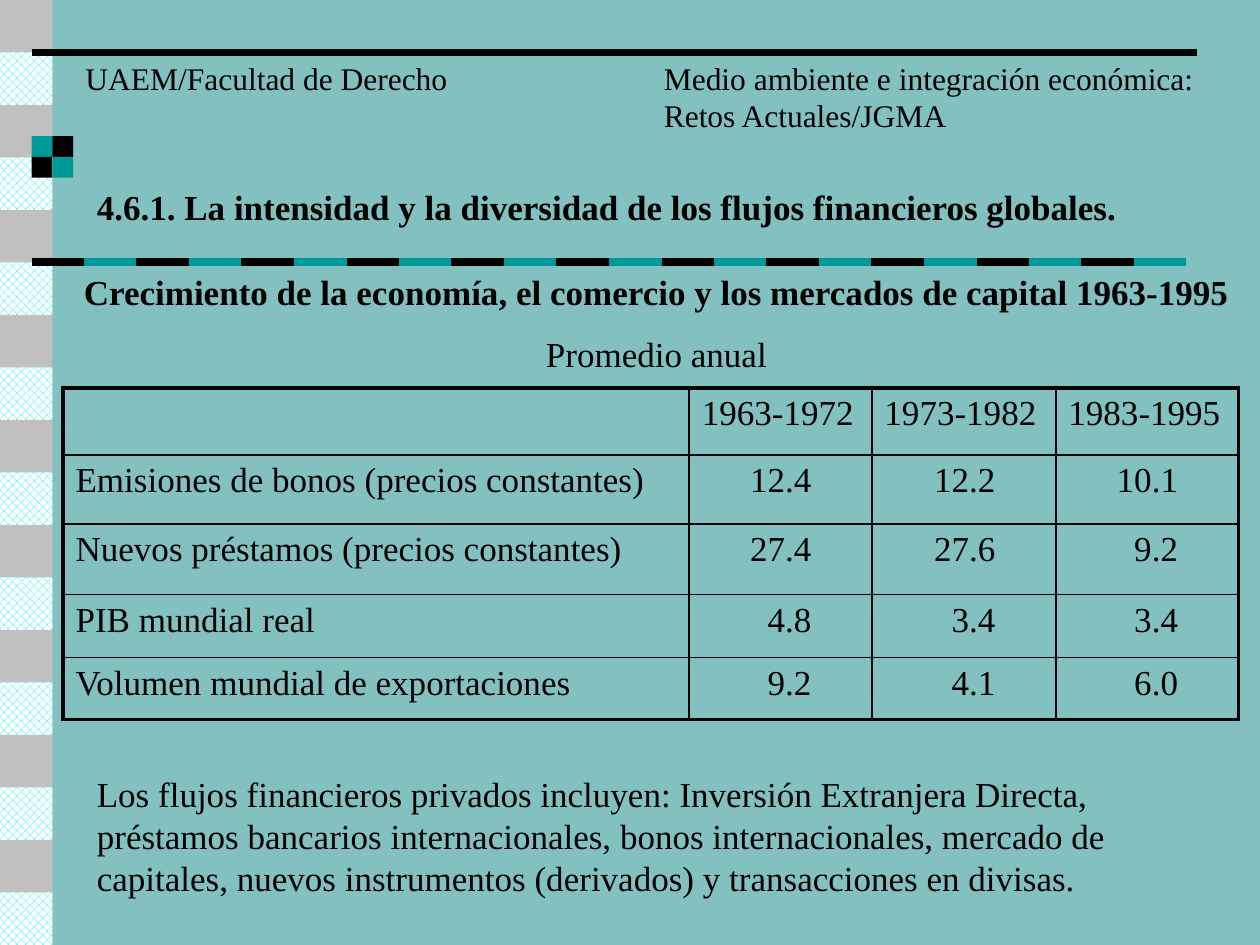
from dataclasses import dataclass

from lxml.etree import SubElement
from pptx import Presentation
from pptx.dml.color import RGBColor
from pptx.enum.dml import MSO_PATTERN
from pptx.enum.shapes import MSO_CONNECTOR, MSO_SHAPE
from pptx.enum.text import PP_ALIGN
from pptx.oxml.ns import qn
from pptx.util import Inches, Pt


@dataclass(frozen=True)
class Theme:
    """Colours, font and sizes shared by the whole slide."""
    back: RGBColor = RGBColor.from_string("83C1C0")
    ink: RGBColor = RGBColor.from_string("000000")
    teal: RGBColor = RGBColor.from_string("009999")
    grey: RGBColor = RGBColor.from_string("C0C0C0")
    aqua: RGBColor = RGBColor.from_string("00EEE8")
    white: RGBColor = RGBColor.from_string("FFFFFF")
    font: str = "Times New Roman"
    body: int = 20
    small: int = 18
    rule: float = 4.5
    outer: float = 2.25
    inner: float = 1


THEME = Theme()
UNIT = 5 / 12

ROWS = [
    ["", "1963-1972", "1973-1982", "1983-1995"],
    ["Emisiones de bonos (precios constantes)", "12.4", "12.2", "10.1"],
    ["Nuevos préstamos (precios constantes)", "27.4", "27.6", "9.2"],
    ["PIB mundial real", "4.8", "3.4", "3.4"],
    ["Volumen mundial de exportaciones", "9.2", "4.1", "6.0"],
]
COLUMN_WIDTHS = [4.97, 1.45, 1.46, 1.45]
ROW_HEIGHTS = [0.53, 0.55, 0.56, 0.5, 0.49]


def style_para(para, text, size=THEME.body, bold=False, align=PP_ALIGN.LEFT):
    """Write text in a paragraph and set its font and alignment."""
    para.text = text
    para.alignment = align
    font = para.font
    font.name, font.size, font.bold = THEME.font, Pt(size), bold
    font.color.rgb = THEME.ink


def add_text(page, box, lines, wrap=True, gap=0, **style):
    """Add a text box holding (text, bold) lines, gap points apart."""
    frame = page.shapes.add_textbox(*map(Inches, box)).text_frame
    frame.word_wrap = wrap
    for index, (text, bold) in enumerate(lines):
        para = frame.add_paragraph() if index else frame.paragraphs[0]
        style_para(para, text, bold=bold, **style)
        if index:
            para.space_before = Pt(gap)


def add_square(page, left, top, side):
    """Add a plain square without outline and return its fill."""
    square = page.shapes.add_shape(
        MSO_SHAPE.RECTANGLE, *map(Inches, (left, top, side, side)))
    square.shadow.inherit = False
    square.line.fill.background()
    return square.fill


def add_rule(page, left, right, top, color):
    """Add one thick horizontal line."""
    rule = page.shapes.add_connector(
        MSO_CONNECTOR.STRAIGHT, *map(Inches, (left, top, right, top)))
    rule.line.color.rgb = color
    rule.line.width = Pt(THEME.rule)
    SubElement(rule._element.spPr, qn("a:effectLst"))


def add_side_band(page, left, top, height):
    """Fill a column with alternating grey and patterned squares."""
    for index in range(round(height / UNIT)):
        fill = add_square(page, left, top + index * UNIT, UNIT)
        if index % 2:
            fill.patterned()
            fill.pattern = MSO_PATTERN.PERCENT_50
            fill.fore_color.rgb = THEME.aqua
            fill.back_color.rgb = THEME.white
        else:
            fill.solid()
            fill.fore_color.rgb = THEME.grey


def add_checker(page, left, top, size):
    """Draw the two by two checker ornament."""
    side = size / 2
    for index in range(4):
        row, column = divmod(index, 2)
        fill = add_square(page, left + column * side, top + row * side, side)
        fill.solid()
        fill.fore_color.rgb = THEME.ink if row != column else THEME.teal


def add_dashed_rule(page, left, top, width):
    """Draw a rule of alternating black and teal pieces."""
    for index in range(round(width / UNIT)):
        start = left + index * UNIT
        color = THEME.teal if index % 2 else THEME.ink
        add_rule(page, start, start + UNIT, top, color)


def add_header(page, left, top, width):
    """Place the course line beneath the top rule."""
    add_rule(page, left, left + width, top, THEME.ink)
    add_text(page, (left + 0.33, top, 3.11, 0.4),
             [("UAEM/Facultad de Derecho", False)], wrap=False, size=THEME.small)
    add_text(page, (left + 4.92, top, 4.51, 0.71),
             [("Medio ambiente e integración económica:", False),
              ("Retos Actuales/JGMA", False)], wrap=False, size=THEME.small)


def set_borders(cell, widths):
    """Draw the left, right, top and bottom borders of a cell."""
    props = cell._tc.get_or_add_tcPr()
    for side, width in zip("LRTB", widths):
        line = SubElement(props, qn(f"a:ln{side}"), w=str(Pt(width)))
        fill = SubElement(line, qn("a:solidFill"))
        SubElement(fill, qn("a:srgbClr"), val=str(THEME.ink))


def add_growth_table(page, box):
    """Build the table of growth rates by period."""
    last_row, last_column = len(ROWS) - 1, len(COLUMN_WIDTHS) - 1
    table = page.shapes.add_table(
        len(ROWS), len(COLUMN_WIDTHS), *map(Inches, box)).table
    table.first_row = table.horz_banding = False
    for column, width in zip(table.columns, COLUMN_WIDTHS):
        column.width = Inches(width)
    for row, height in zip(table.rows, ROW_HEIGHTS):
        row.height = Inches(height)
    for r, values in enumerate(ROWS):
        for c, value in enumerate(values):
            cell = table.cell(r, c)
            on_edge = (c == 0, c == last_column, r == 0, r == last_row)
            set_borders(cell, [THEME.outer if edge else THEME.inner
                               for edge in on_edge])
            cell.fill.background()
            is_number = r > 0 and c > 0
            if is_number:
                cell.margin_right = Inches(0.48)
            style_para(cell.text_frame.paragraphs[0], value,
                       align=PP_ALIGN.RIGHT if is_number else PP_ALIGN.LEFT)


def main():
    """Build and save the slide."""
    deck = Presentation()
    deck.slide_width, deck.slide_height = Inches(10), Inches(7.5)
    page = deck.slides.add_slide(deck.slide_layouts[6])
    page.background.fill.solid()
    page.background.fill.fore_color.rgb = THEME.back

    add_side_band(page, 0, 0, 7.5)
    add_header(page, 0.25, UNIT, 9.25)
    add_checker(page, 0.25, 1.08, 0.33)
    add_dashed_rule(page, 0.25, 2.08, 22 * UNIT)
    add_text(page, (0.67, 1.42, 8.67, 0.43), [
        ("4.6.1. La intensidad y la diversidad de los flujos financieros "
         "globales.", True)])
    add_text(page, (0.42, 2.1, 9.58, 0.94), [
        ("Crecimiento de la economía, el comercio y los mercados de capital "
         "1963-1995", True),
        ("Promedio anual", False)], gap=11, align=PP_ALIGN.CENTER)
    add_growth_table(page, (0.5, 3.08, 9.33, 2.63))
    add_text(page, (0.67, 6.08, 9.08, 1.1), [
        ("Los flujos financieros privados incluyen: Inversión Extranjera "
         "Directa, préstamos bancarios internacionales, bonos "
         "internacionales, mercado de capitales, nuevos instrumentos "
         "(derivados) y transacciones en divisas.", False)])
    deck.save("out.pptx")


if __name__ == "__main__":
    main()
